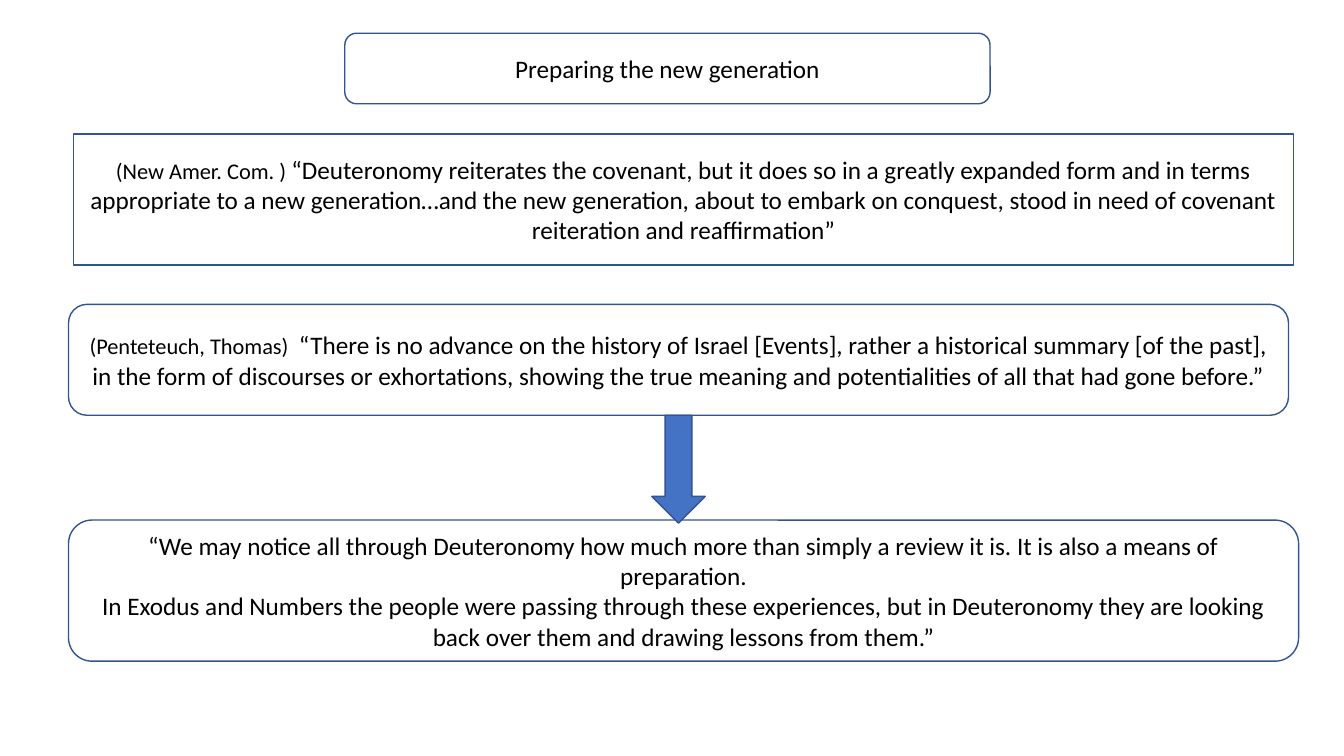
"""Build a slide on how Deuteronomy prepares the new generation."""
from pptx import Presentation
from pptx import util as u
from pptx.dml.color import RGBColor
from pptx.enum import shapes, text

HUES = {"paper": "FFFFFF", "ink": "000000", "edge": "325491", "arrow": "4472C4"}
FONT = "Calibri"
ROUND = shapes.MSO_SHAPE.ROUNDED_RECTANGLE
RECT = shapes.MSO_SHAPE.RECTANGLE
DOWN = shapes.MSO_SHAPE.DOWN_ARROW

TITLE = [("", "Preparing the new generation")]
COVENANT = [(
    "(New Amer. Com. ) ",
    "“Deuteronomy reiterates the covenant, but it does so in a greatly expanded "
    "form and in terms appropriate to a new generation…and the new generation, "
    "about to embark on conquest, stood in need of covenant reiteration and "
    "reaffirmation”")]
SUMMARY = [(
    "(Penteteuch, Thomas)  ",
    "“There is no advance on the history of Israel [Events], rather a historical "
    "summary [of the past], in the form of discourses or exhortations, showing the "
    "true meaning and potentialities of all that had gone before.”")]
LESSONS = [
    ("", "“We may notice all through Deuteronomy how much more than simply a review "
         "it is. It is also a means of preparation."),
    ("", "In Exodus and Numbers the people were passing through these experiences, "
         "but in Deuteronomy they are looking back over them and drawing lessons "
         "from them.”")]


def hue(name):
    """Return the named colour."""
    return RGBColor.from_string(HUES[name])


def block(slide, kind, box, fill):
    """Draw an outlined shape in the box of inches."""
    shape = slide.shapes.add_shape(kind, *map(u.Inches, box))
    shape.shadow.inherit = False
    shape.fill.solid()
    shape.fill.fore_color.rgb = hue(fill)
    shape.line.color.rgb = hue("edge")
    shape.line.width = u.Pt(1)
    return shape


def panel(slide, kind, box, quotes):
    """Draw a panel of centred quotes, each led by a smaller source if it has one."""
    frame = block(slide, kind, box, "paper").text_frame
    frame.word_wrap = True
    frame.vertical_anchor = text.MSO_ANCHOR.MIDDLE
    for i, (source, quote) in enumerate(quotes):
        para = frame.add_paragraph() if i else frame.paragraphs[0]
        para.alignment = text.PP_ALIGN.CENTER
        para.font.name = FONT
        para.font.size = u.Pt(18)
        para.font.color.rgb = hue("ink")
        if source:
            run = para.add_run()
            run.text = source
            run.font.size = u.Pt(16)
        para.add_run().text = quote


def arrow(slide, box, width, length):
    """Hang a down arrow from the middle of the box's lower side."""
    left, top, wide, high = box
    place = (left + (wide - width) / 2, top + high, width, length)
    block(slide, DOWN, place, "arrow")


def main():
    """Build and save the slide."""
    deck = Presentation()
    deck.slide_width, deck.slide_height = u.Inches(13.33), u.Inches(7.5)
    slide = deck.slides.add_slide(deck.slide_layouts[6])
    summary = (0.68, 3.02, 12.1, 1.1)
    panel(slide, ROUND, (3.42, 0.33, 6.4, 0.7), TITLE)
    panel(slide, RECT, (0.73, 1.33, 12.1, 1.3), COVENANT)
    panel(slide, ROUND, summary, SUMMARY)
    panel(slide, ROUND, (0.68, 5.16, 12.2, 1.4), LESSONS)
    arrow(slide, summary, 0.53, 1.07)
    deck.save("out.pptx")


if __name__ == "__main__":
    main()
